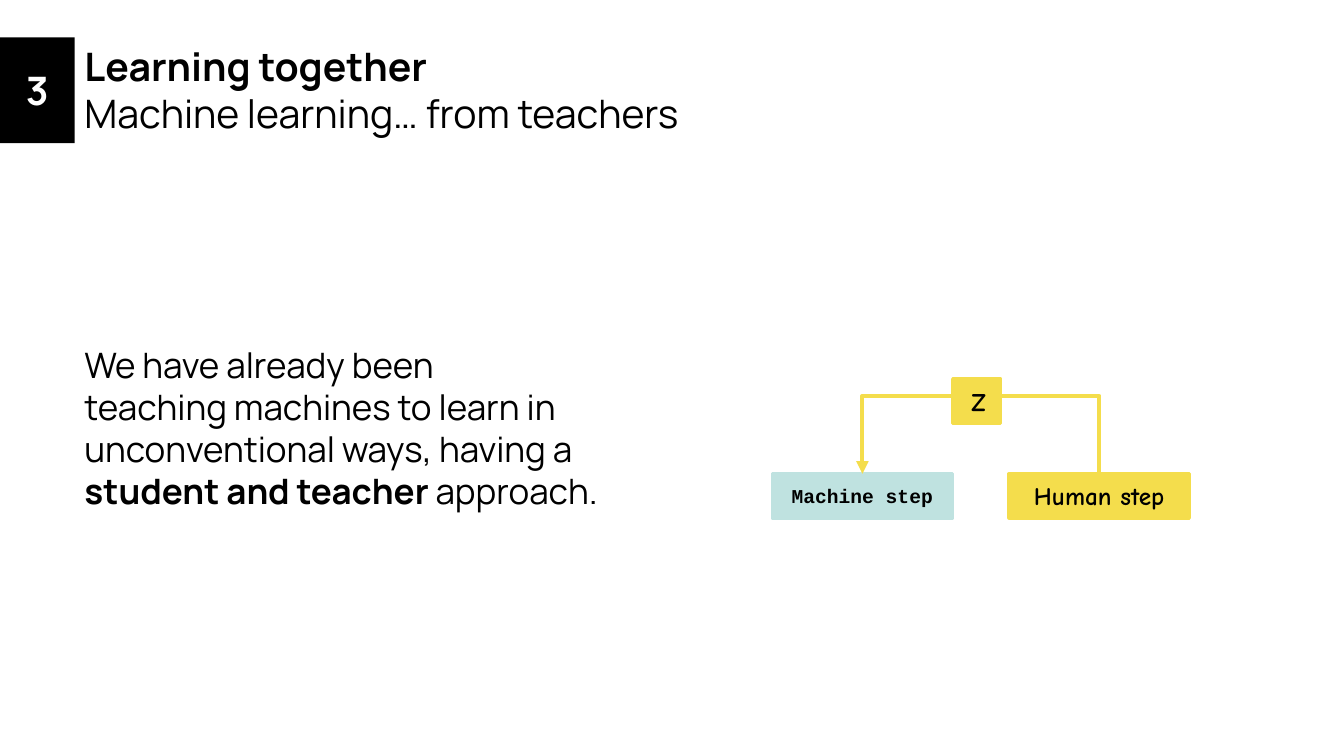
"""Build the slide on machines that learn from teachers."""
from lxml import etree
from pptx import Presentation
from pptx.dml.color import RGBColor
from pptx.enum.shapes import MSO_CONNECTOR, MSO_SHAPE
from pptx.enum.text import MSO_ANCHOR, MSO_AUTO_SIZE, PP_ALIGN
from pptx.oxml.ns import qn
from pptx.util import Pt

RECTANGLE = MSO_SHAPE.RECTANGLE
ELBOW = MSO_CONNECTOR.ELBOW
TOP, MIDDLE = MSO_ANCHOR.TOP, MSO_ANCHOR.MIDDLE
LEFT, CENTER = PP_ALIGN.LEFT, PP_ALIGN.CENTER
GROW = MSO_AUTO_SIZE.SHAPE_TO_FIT_TEXT

BLACK = RGBColor(0x00, 0x00, 0x00)
WHITE = RGBColor(0xFF, 0xFF, 0xFF)
MINT = RGBColor(0xBF, 0xE2, 0xE0)
YELLOW = RGBColor(0xF4, 0xDD, 0x4C)

HEADING = {"name": "Manrope", "size": Pt(28)}
BODY = {"name": "Manrope", "size": Pt(25)}
MACHINE = {"name": "Courier New", "size": Pt(14)}
HUMAN = {"name": "Comic Neue", "size": Pt(18)}

PAD = Pt(7.2)
HEADER_TOP, HEADER_LEFT = 26.64, 53.28
STEP_TOP, STEP_WIDTH, STEP_HEIGHT = 338.4, 128.88, 31.68
MACHINE_LEFT, HUMAN_LEFT = 551.52, 720.72
LOOP_RISE, LOOP_DEPTH = 48.96, 0.05


def set_values(target, values):
    """Set each named value on the target."""
    for name, value in values.items():
        setattr(target, name, value)


def write(frame, paragraphs, font, color=BLACK, align=LEFT, **layout):
    """Fill a frame with paragraphs of (words, bold) runs."""
    set_values(frame, {"word_wrap": True, "margin_left": PAD,
                       "margin_right": PAD, **layout})
    for index, runs in enumerate(paragraphs):
        paragraph = frame.add_paragraph() if index else frame.paragraphs[0]
        paragraph.alignment = align
        for words, bold in runs:
            run = paragraph.add_run()
            run.text = words
            set_values(run.font, {**font, "bold": bold})
            run.font.color.rgb = color


def add_text(slide, box, paragraphs, font, **layout):
    """Add a text box."""
    textbox = slide.shapes.add_textbox(*map(Pt, box))
    write(textbox.text_frame, paragraphs, font, **layout)


def add_block(slide, box, label, font, fill, border=2.25, **layout):
    """Add a filled rectangle with a bold label."""
    block = slide.shapes.add_shape(RECTANGLE, *map(Pt, box))
    block.shadow.inherit = False
    block.fill.solid()
    block.fill.fore_color.rgb = fill
    if border:
        block.line.color.rgb = fill
        block.line.width = Pt(border)
    else:
        block.line.fill.background()
    write(block.text_frame, [[(label, True)]], font,
          **{"vertical_anchor": MIDDLE, "align": CENTER, **layout})
    return block


def add_loop_arrow(slide, source, target):
    """Link the tops of two blocks with an arrow that rises above them."""
    arrow = slide.shapes.add_connector(ELBOW, 0, 0, 0, 0)
    arrow.begin_connect(source, 0)
    arrow.end_connect(target, 0)
    span = source.left - target.left
    middle = target.left + (span + target.width) // 2
    set_values(arrow, {"left": middle, "top": target.top - span // 2,
                       "width": Pt(LOOP_DEPTH), "height": span})
    arrow.line.color.rgb = YELLOW
    arrow.line.width = Pt(3)
    properties = arrow._element.spPr
    frame = properties.find(qn("a:xfrm"))
    for name, value in {"rot": "5400000", "flipH": "0", "flipV": "0"}.items():
        frame.set(name, value)
    guides = properties.find(qn("a:prstGeom")).get_or_add_avLst()
    bend = round(-LOOP_RISE / LOOP_DEPTH * 100000)
    etree.SubElement(guides, qn("a:gd"), name="adj1", fmla=f"val {bend}")
    outline = properties.find(qn("a:ln"))
    etree.SubElement(outline, qn("a:round"))
    etree.SubElement(outline, qn("a:tailEnd"), type="triangle")
    etree.SubElement(properties, qn("a:effectLst"))


def main():
    """Build and save the slide."""
    deck = Presentation()
    set_values(deck, {"slide_width": Pt(960), "slide_height": Pt(540)})
    slide = deck.slides.add_slide(deck.slide_layouts[6])

    add_text(slide, (HEADER_LEFT, 151.2, 417.6, 338.4), [
        [("We have already been", False)],
        [("teaching machines to learn in unconventional ways, having a ", False),
         ("student and teacher", True), (" approach.", False)],
    ], BODY, vertical_anchor=MIDDLE, margin_top=PAD, margin_bottom=Pt(37))
    add_text(slide, (HEADER_LEFT, HEADER_TOP, 772.56, 74.88), [
        [("Learning together", True)],
        [("Machine learning… from teachers", False)],
    ], HEADING, vertical_anchor=TOP, auto_size=GROW)
    add_block(slide, (0, HEADER_TOP, HEADER_LEFT, 75.6), "3", HEADING, BLACK,
              border=0, color=WHITE)

    machine, human = [
        add_block(slide, (left, STEP_TOP, STEP_WIDTH, STEP_HEIGHT), label,
                  font, fill, margin_top=PAD, margin_bottom=PAD)
        for left, label, font, fill in (
            (MACHINE_LEFT, "Machine step", MACHINE, MINT),
            (HUMAN_LEFT, "Human step", HUMAN, YELLOW))]
    add_loop_arrow(slide, human, machine)
    add_block(slide, (680.4, 270.72, 34.56, STEP_HEIGHT), " Z", HUMAN, YELLOW,
              align=LEFT, margin_top=PAD, margin_bottom=PAD)

    deck.save("out.pptx")


if __name__ == "__main__":
    main()
